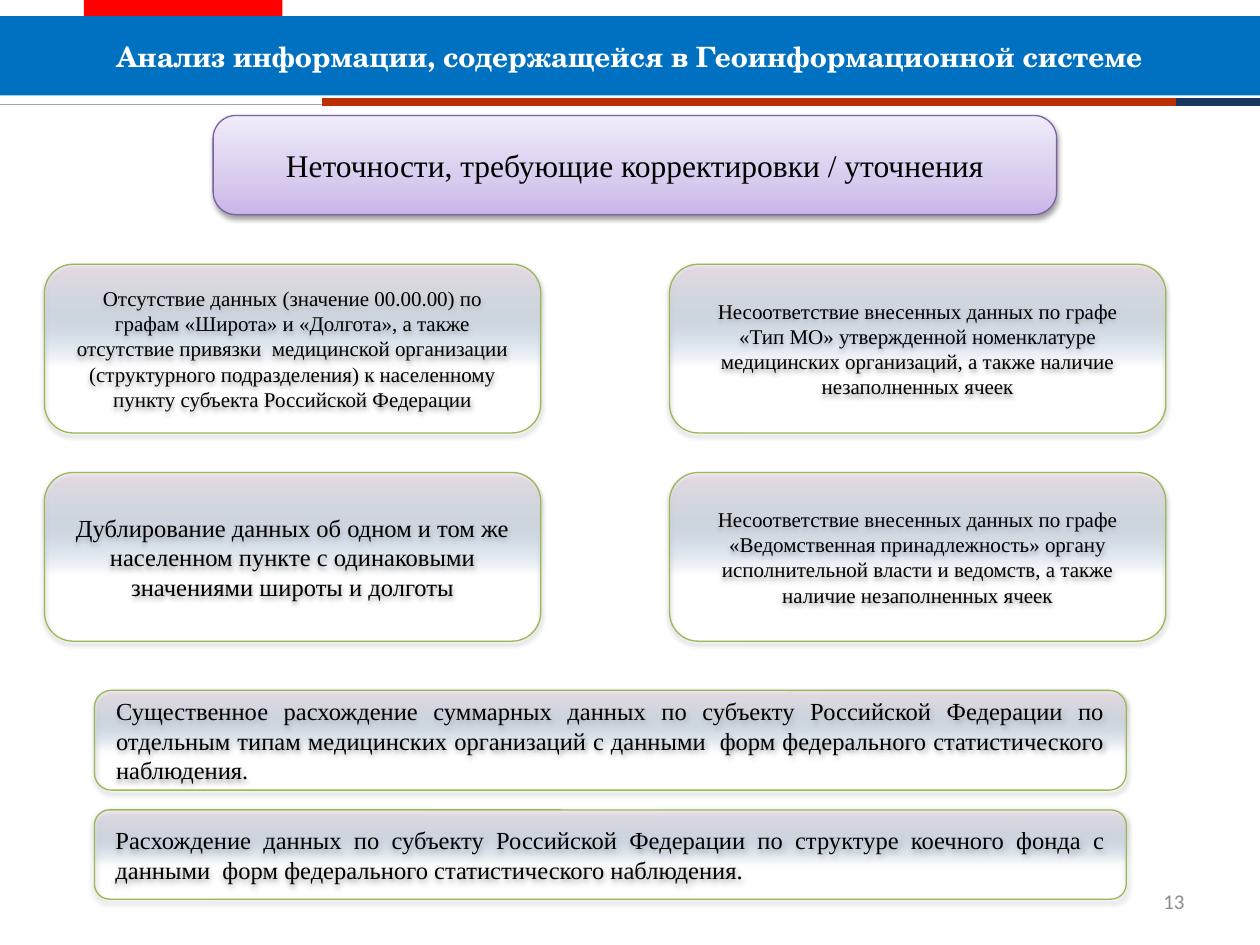
"""Builds the slide on inaccuracies found in the geoinformation system data."""
from lxml.etree import SubElement
from pptx import Presentation
from pptx.dml.color import RGBColor
from pptx.enum.shapes import MSO_CONNECTOR, MSO_SHAPE as Shape
from pptx.enum.text import MSO_ANCHOR as Anchor, PP_ALIGN as Align
from pptx.oxml.ns import qn
from pptx.util import Pt

WHITE = RGBColor(0xFF, 0xFF, 0xFF)
BLACK = RGBColor(0x00, 0x00, 0x00)
GRAY = RGBColor(0x8C, 0x8C, 0x8C)
SILVER = RGBColor(0xA6, 0xA6, 0xA6)
RED = RGBColor(0xFF, 0x00, 0x00)
BLUE = RGBColor(0x00, 0x70, 0xC0)
RUST = RGBColor(0xBC, 0x30, 0x04)
NAVY = RGBColor(0x17, 0x37, 0x5E)
PURPLE = RGBColor(0x7D, 0x60, 0xA0)
GREEN = RGBColor(0x98, 0xB9, 0x55)
LILAC_STOPS = [
    (0, RGBColor(0xC9, 0xB5, 0xE8), 100),
    (35, RGBColor(0xD8, 0xCB, 0xEE), 100),
    (100, RGBColor(0xF0, 0xEA, 0xF9), 100),
]
MIST_STOPS = [
    (0, RGBColor(0x5E, 0x9E, 0xFF), 0),
    (40, RGBColor(0x85, 0xC2, 0xFF), 0),
    (70, RGBColor(0xC4, 0xD6, 0xEB), 41),
    (100, RGBColor(0xFF, 0xEB, 0xFA), 55),
]


class SlideBuilder:
    """Holds the style and the current slide."""

    serif = "Times New Roman"
    display = "TeX Gyre Schola"
    sans = "Calibri"

    def __init__(self, slide):
        self.slide = slide

    def set_text(self, shape, text, size, font, color, align, bold=False):
        frame = shape.text_frame
        frame.word_wrap = True
        frame.vertical_anchor = Anchor.MIDDLE
        frame.text = text
        paragraph = frame.paragraphs[0]
        paragraph.alignment = align
        for run in paragraph.runs:
            run.font.size = Pt(size)
            run.font.name = font
            run.font.bold = bold
            run.font.color.rgb = color
        return frame

    def label(self, box, text, size, color, align):
        caption = self.slide.shapes.add_textbox(*map(Pt, box))
        self.set_text(caption, text, size, self.sans, color, align)

    def line(self, start, end, y, color, width):
        rule = self.slide.shapes.add_connector(
            MSO_CONNECTOR.STRAIGHT, Pt(start), Pt(y), Pt(end), Pt(y))
        rule.line.color.rgb = color
        rule.line.width = Pt(width)
        SubElement(rule._element.spPr, qn("a:effectLst"))

    def band(self, box, color):
        strip = self.slide.shapes.add_shape(Shape.RECTANGLE, *map(Pt, box))
        strip.shadow.inherit = False
        strip.fill.solid()
        strip.fill.fore_color.rgb = color
        strip.line.fill.background()
        return strip

    def title(self, box, text):
        self.set_text(self.band(box, BLUE), text, 16, self.display, WHITE, Align.CENTER, True)

    def color_node(self, parent, color, opacity):
        node = SubElement(parent, qn("a:srgbClr"), val=str(color))
        if opacity < 100:
            SubElement(node, qn("a:alpha"), val=str(opacity * 1000))

    def card(self, box, text, size, align=Align.CENTER, stops=MIST_STOPS, edge=GREEN, corner=0.17):
        card = self.slide.shapes.add_shape(Shape.ROUNDED_RECTANGLE, *map(Pt, box))
        card.adjustments[0] = corner
        card.line.color.rgb = edge
        card.line.width = Pt(0.75)
        card.fill.gradient()
        card.fill.gradient_angle = 90
        properties = card._element.spPr
        stop_list = properties.find(qn("a:gradFill")).find(qn("a:gsLst"))
        for default_stop in list(stop_list):
            stop_list.remove(default_stop)
        for position, color, opacity in stops:
            stop = SubElement(stop_list, qn("a:gs"), pos=str(position * 1000))
            self.color_node(stop, color, opacity)
        card.shadow.inherit = False
        shadow = SubElement(
            properties.find(qn("a:effectLst")), qn("a:outerShdw"), blurRad=str(Pt(3.1)),
            dist=str(Pt(1.6)), dir="5400000", rotWithShape="0")
        self.color_node(shadow, BLACK, 38)
        frame = self.set_text(card, text, size, self.serif, BLACK, align)
        frame.margin_left = frame.margin_right = Pt(9.5)
        frame.margin_top = frame.margin_bottom = Pt(5)


ISSUES = [
    [("Отсутствие данных (значение 00.00.00) по графам «Широта» и «Долгота», а также "
      "отсутствие привязки  медицинской организации (структурного подразделения) "
      "к населенному пункту субъекта Российской Федерации", 12),
     ("Несоответствие внесенных данных по графе «Тип МО» утвержденной номенклатуре "
      "медицинских организаций, а также наличие незаполненных ячеек", 12)],
    [("Дублирование данных об одном и том же населенном пункте с одинаковыми "
      "значениями широты и долготы", 14),
     ("Несоответствие внесенных данных по графе «Ведомственная принадлежность» органу "
      "исполнительной власти и ведомств, а также наличие незаполненных ячеек", 12)],
]
DISCREPANCIES = [
    (394.5, 57, "Существенное расхождение суммарных данных по субъекту Российской Федерации "
     "по отдельным типам медицинских организаций с данными  форм федерального "
     "статистического наблюдения."),
    (462.8, 51, "Расхождение данных по субъекту Российской Федерации по структуре коечного "
     "фонда с данными  форм федерального статистического наблюдения."),
]


def main():
    deck = Presentation()
    deck.slide_width, deck.slide_height = Pt(720), Pt(540)
    builder = SlideBuilder(deck.slides.add_slide(deck.slide_layouts[6]))

    builder.label((516, 500.5, 168, 28.8), "13", 12, GRAY, Align.RIGHT)
    builder.line(0, 209.5, 59.8, SILVER, 1)
    builder.line(184, 672, 58.2, RUST, 4.5)
    builder.line(672, 720, 58.2, NAVY, 4.5)
    builder.band((48, 0, 113.4, 15), RED)
    builder.title((0, 9.2, 720, 45.4), "Анализ информации, содержащейся в Геоинформационной системе")

    builder.card((121.8, 66, 482, 56.7), "Неточности, требующие корректировки / уточнения", 18,
                 stops=LILAC_STOPS, edge=PURPLE, corner=0.23)
    for row, issues in enumerate(ISSUES):
        for column, (issue, size) in enumerate(issues):
            builder.card((25.4 + 357.2 * column, 151 + 119 * row, 283.6, 96.4), issue, size)
    for top, height, discrepancy in DISCREPANCIES:
        builder.card((54, top, 589.6, height), discrepancy, 14, Align.JUSTIFY)

    deck.save("out.pptx")


if __name__ == "__main__":
    main()
